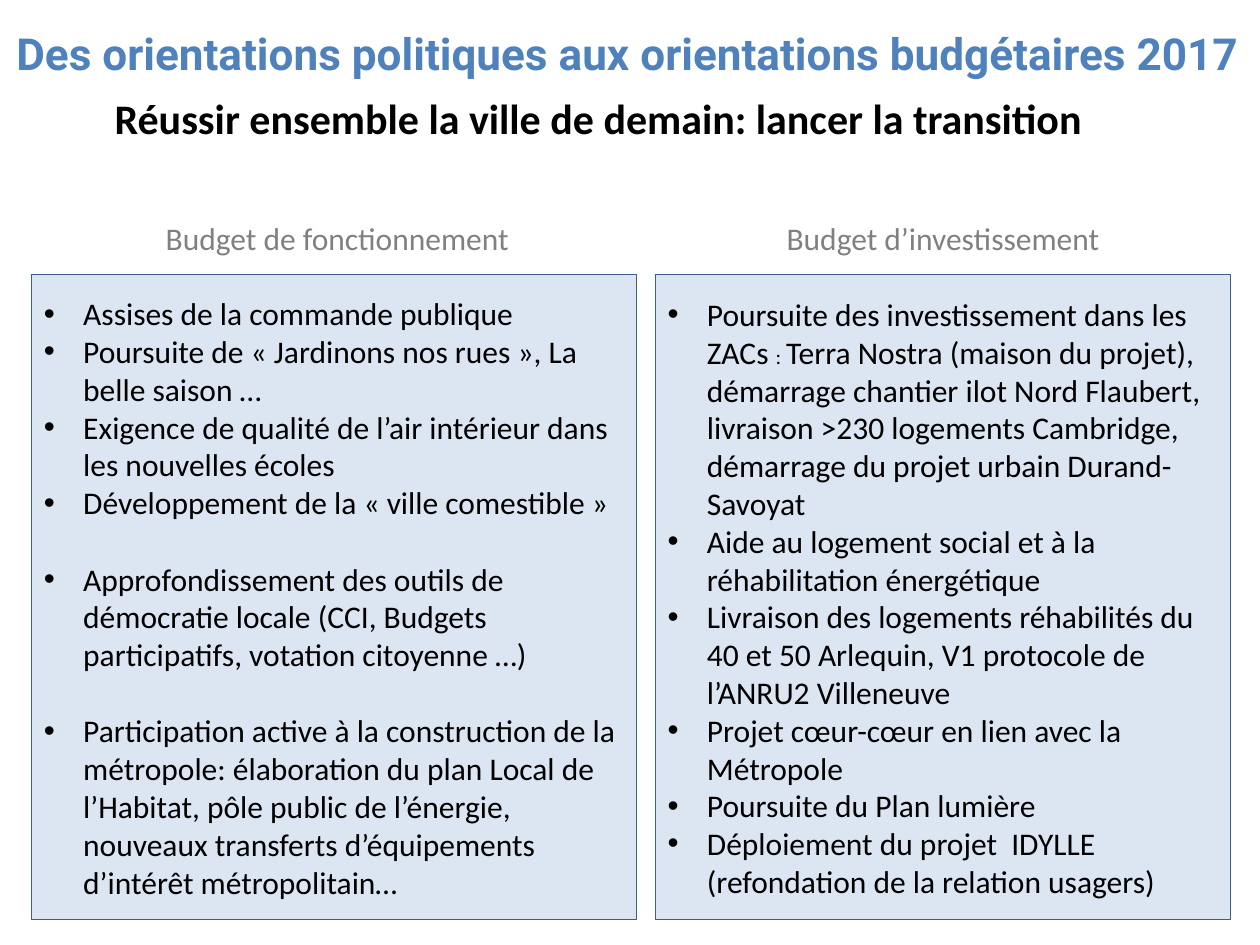
"""Build the slide on the 2017 budget orientations."""
from lxml.etree import SubElement
from pptx import Presentation
from pptx.dml.color import RGBColor
from pptx.enum.shapes import MSO_SHAPE
from pptx.enum.text import MSO_ANCHOR, PP_ALIGN
from pptx.oxml.ns import qn
from pptx.util import Pt


def colour(value):
    return RGBColor.from_string(value)


def write(para, text, size=18, color="000000", font="Calibri", bold=False,
          align=PP_ALIGN.CENTER, before=0, bullet=False):
    para.alignment = align
    para.space_before = Pt(before)
    if bullet:
        properties = para._p.get_or_add_pPr()
        properties.set("marL", str(Pt(22.5)))
        properties.set("indent", str(-Pt(22.5)))
        SubElement(properties, qn("a:buFont")).set("typeface", "Arial")
        SubElement(properties, qn("a:buChar")).set("char", "•")
    for index, part in enumerate(text.split("|")):
        span = para.add_run()
        span.text = part
        span.font.name = font
        span.font.size = Pt(12 if index == 1 else size)
        span.font.bold = bold
        span.font.color.rgb = colour(color)


deck = Presentation()
deck.slide_width, deck.slide_height = Pt(720), Pt(540)
page = deck.slides.add_slide(deck.slide_layouts[6])

headings = [
    ("Des orientations politiques aux orientations budgétaires 2017",
     (-1.4, 0, 720, 60), dict(size=25.2, color="4F81BD", font="Roboto", bold=True)),
    ("Réussir ensemble la ville de demain: lancer la transition",
     (18, 50, 648, 34), dict(size=24, bold=True)),
    ("Budget de fonctionnement", (20, 121.7, 345.6, 29), dict(color="808080")),
    ("Budget d’investissement", (374.4, 121.7, 329, 29), dict(color="808080")),
]
for text, place, style in headings:
    box = page.shapes.add_textbox(*map(Pt, place))
    box.text_frame.word_wrap = True
    box.text_frame.vertical_anchor = MSO_ANCHOR.MIDDLE
    write(box.text_frame.paragraphs[0], text, **style)

panels = [
    (18, 345.6, [
        ("Assises de la commande publique", 0),
        ("Poursuite de « Jardinons nos rues », La belle saison …", 0),
        ("Exigence de qualité de l’air intérieur dans les nouvelles écoles", 0),
        ("Développement de la « ville comestible »", 0),
        ("Approfondissement des outils de démocratie locale (CCI, Budgets "
         "participatifs, votation citoyenne …)", 22),
        ("Participation active à la construction de la métropole: élaboration du "
         "plan Local de l’Habitat, pôle public de l’énergie, nouveaux transferts "
         "d’équipements d’intérêt métropolitain…", 22),
    ]),
    (374.4, 329, [
        ("Poursuite des investissement dans les ZACs |: |Terra Nostra (maison du "
         "projet), démarrage chantier ilot Nord Flaubert, livraison >230 logements "
         "Cambridge, démarrage du projet urbain Durand-Savoyat", 0),
        ("Aide au logement social et à la réhabilitation énergétique", 0),
        ("Livraison des logements réhabilités du 40 et 50 Arlequin, V1 protocole "
         "de l’ANRU2 Villeneuve", 0),
        ("Projet cœur-cœur en lien avec la Métropole", 0),
        ("Poursuite du Plan lumière", 0),
        ("Déploiement du projet  IDYLLE (refondation de la relation usagers)", 0),
    ]),
]
for left, width, items in panels:
    panel = page.shapes.add_shape(
        MSO_SHAPE.RECTANGLE, Pt(left), Pt(157), Pt(width), Pt(368.6))
    panel.shadow.inherit = False
    panel.fill.solid()
    panel.fill.fore_color.rgb = colour("DCE6F2")
    panel.line.color.rgb = colour("3A5F8C")
    panel.line.width = Pt(0.75)
    frame = panel.text_frame
    frame.word_wrap = True
    frame.vertical_anchor = MSO_ANCHOR.MIDDLE
    for index, (text, before) in enumerate(items):
        para = frame.add_paragraph() if index else frame.paragraphs[0]
        write(para, text, align=PP_ALIGN.LEFT, before=before, bullet=True)

deck.save("out.pptx")
